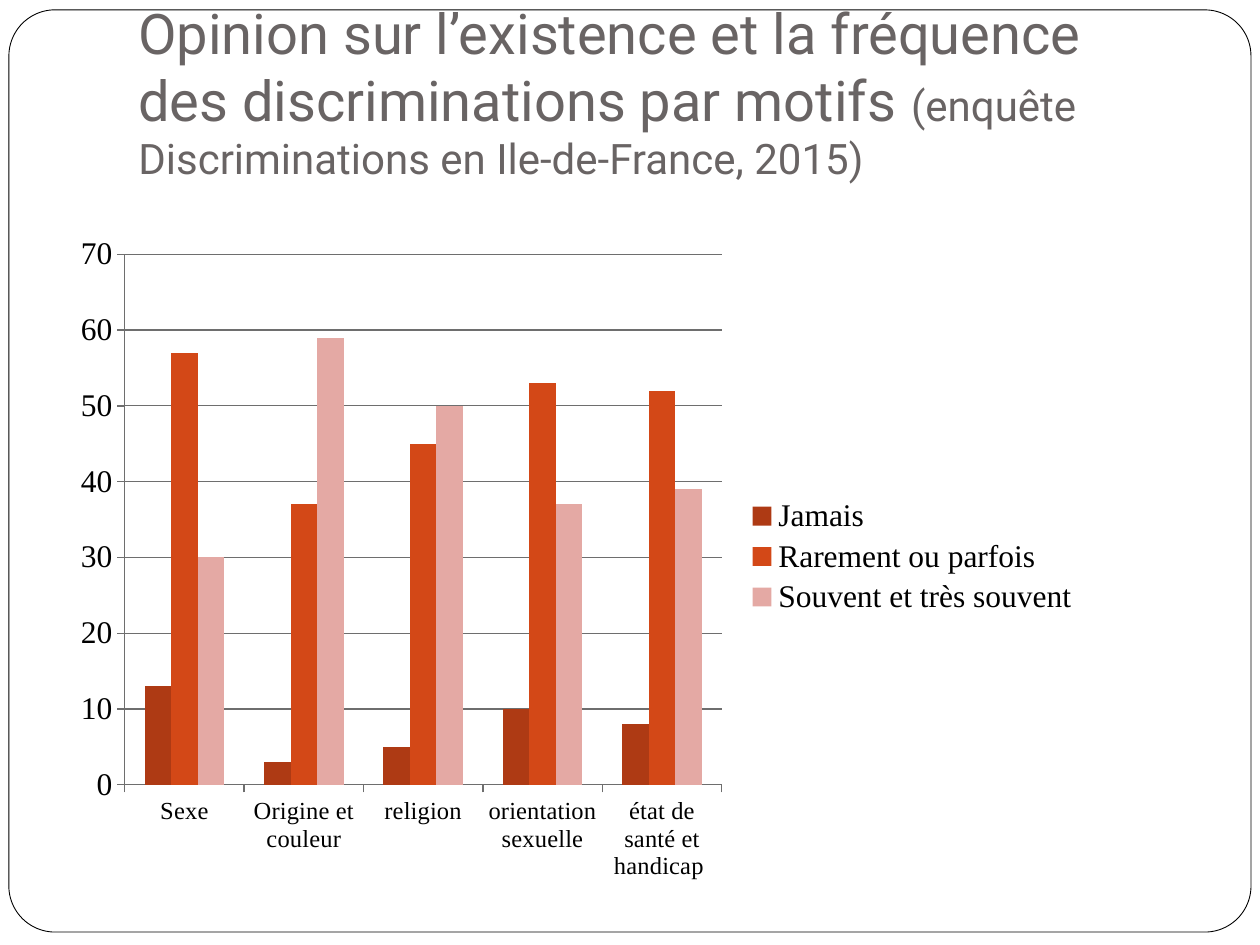
from dataclasses import dataclass

from pptx import Presentation
from pptx.chart.data import CategoryChartData
from pptx.dml.color import RGBColor
from pptx.enum.chart import XL_CHART_TYPE, XL_LEGEND_POSITION, XL_TICK_MARK
from pptx.enum.shapes import MSO_SHAPE
from pptx.enum.text import MSO_ANCHOR, PP_ALIGN
from pptx.oxml import parse_xml
from pptx.oxml.ns import nsdecls, qn
from pptx.util import Cm, Pt

COLUMNS = XL_CHART_TYPE.COLUMN_CLUSTERED
LEGEND_RIGHT = XL_LEGEND_POSITION.RIGHT
TICK_OUT = XL_TICK_MARK.OUTSIDE
ROUNDED = MSO_SHAPE.ROUNDED_RECTANGLE
BOTTOM = MSO_ANCHOR.BOTTOM
LEFT = PP_ALIGN.LEFT


@dataclass(frozen=True)
class Theme:
    title_font: str = "Roboto"
    chart_font: str = "Times New Roman"
    title_color: str = "696464"
    text_color: str = "000000"
    paper: str = "FFFFFF"
    grid_color: str = "6E6E6E"
    series_colors: tuple = ("AE3A14", "D34817", "E4A9A4")
    title_size: int = 32
    source_size: int = 24
    chart_size: int = 18
    category_size: int = 14


THEME = Theme()

TITLE_RUNS = (
    ("Opinion sur l’existence et la fréquence des discriminations par motifs ",
     THEME.title_size),
    ("(enquête Discriminations en Ile-de-France, 2015)", THEME.source_size),
)
MOTIFS = ("Sexe", "Origine et couleur", "religion", "orientation sexuelle",
          "état de santé et handicap ")
ANSWERS = {
    "Jamais": (13, 3, 5, 10, 8),
    "Rarement ou parfois": (57, 37, 45, 53, 52),
    "Souvent et très souvent": (30, 59, 50, 37, 39),
}


def rgb(color):
    return RGBColor.from_string(color)


def style_line(line, color, width):
    line.color.rgb = rgb(color)
    line.width = Pt(width)


def style_font(font, name, size, color):
    font.name = name
    font.size = Pt(size)
    font.color.rgb = rgb(color)


def add_frame(s):
    sp = s.shapes.add_shape(ROUNDED, Cm(0.18), Cm(0.2), Cm(25.04), Cm(18.59))
    sp.adjustments[0] = 0.05
    sp.shadow.inherit = False
    sp.fill.solid()
    sp.fill.fore_color.rgb = rgb(THEME.paper)
    style_line(sp.line, THEME.text_color, 0.5)


def add_title(s, runs):
    sp = s.shapes.add_textbox(Cm(2.54), Cm(0.76), Cm(21.59), Cm(3.18))
    tf = sp.text_frame
    tf.word_wrap = True
    tf.vertical_anchor = BOTTOM
    tf.margin_left = tf.margin_right = tf.margin_bottom = Cm(0.25)
    tf.margin_top = Cm(0.13)
    p = tf.paragraphs[0]
    p.alignment = LEFT
    for text, size in runs:
        r = p.add_run()
        r.text = text
        style_font(r.font, THEME.title_font, size, THEME.title_color)


def place_plot(chart, x, y, w, h):
    """Fix the inner plot area, in fractions of the chart."""
    area = chart.element.find(".//" + qn("c:plotArea"))
    for old in area.findall(qn("c:layout")):
        area.remove(old)
    parts = "".join(f'<c:{tag} val="{val}"/>' for tag, val in (
        ("layoutTarget", "inner"), ("xMode", "edge"), ("yMode", "edge"),
        ("x", x), ("y", y), ("w", w), ("h", h)))
    area.insert(0, parse_xml(
        f'<c:layout {nsdecls("c")}><c:manualLayout>{parts}'
        '</c:manualLayout></c:layout>'))


def add_column_chart(s, categories, series):
    data = CategoryChartData()
    data.categories = categories
    for name, values in series.items():
        data.add_series(name, values)
    chart = s.shapes.add_chart(COLUMNS, Cm(1.27), Cm(4.45), Cm(20.75),
                               Cm(13.54), data).chart
    chart.has_title = False
    style_font(chart.font, THEME.chart_font, THEME.chart_size, THEME.text_color)
    place_plot(chart, 0.06, 0.05, 0.58, 0.79)

    # Columns
    plot = chart.plots[0]
    plot.gap_width = 150
    plot.overlap = 0
    plot.vary_by_categories = False
    for ser, color in zip(plot.series, THEME.series_colors):
        ser.format.fill.solid()
        ser.format.fill.fore_color.rgb = rgb(color)

    # Axes
    for axis in (chart.category_axis, chart.value_axis):
        axis.major_tick_mark = TICK_OUT
        style_line(axis.format.line, THEME.grid_color, 0.75)
    style_font(chart.category_axis.tick_labels.font, THEME.chart_font,
               THEME.category_size, THEME.text_color)
    scale = chart.value_axis
    scale.minimum_scale, scale.maximum_scale, scale.major_unit = 0, 70, 10
    scale.has_major_gridlines = True
    style_line(scale.major_gridlines.format.line, THEME.grid_color, 0.75)

    # Legend
    chart.has_legend = True
    chart.legend.position = LEGEND_RIGHT
    chart.legend.include_in_layout = False


def main():
    prs = Presentation()
    prs.slide_width, prs.slide_height = Cm(25.4), Cm(19.05)
    s = prs.slides.add_slide(prs.slide_layouts[6])
    add_frame(s)
    add_title(s, TITLE_RUNS)
    add_column_chart(s, MOTIFS, ANSWERS)
    prs.save("out.pptx")


if __name__ == "__main__":
    main()
